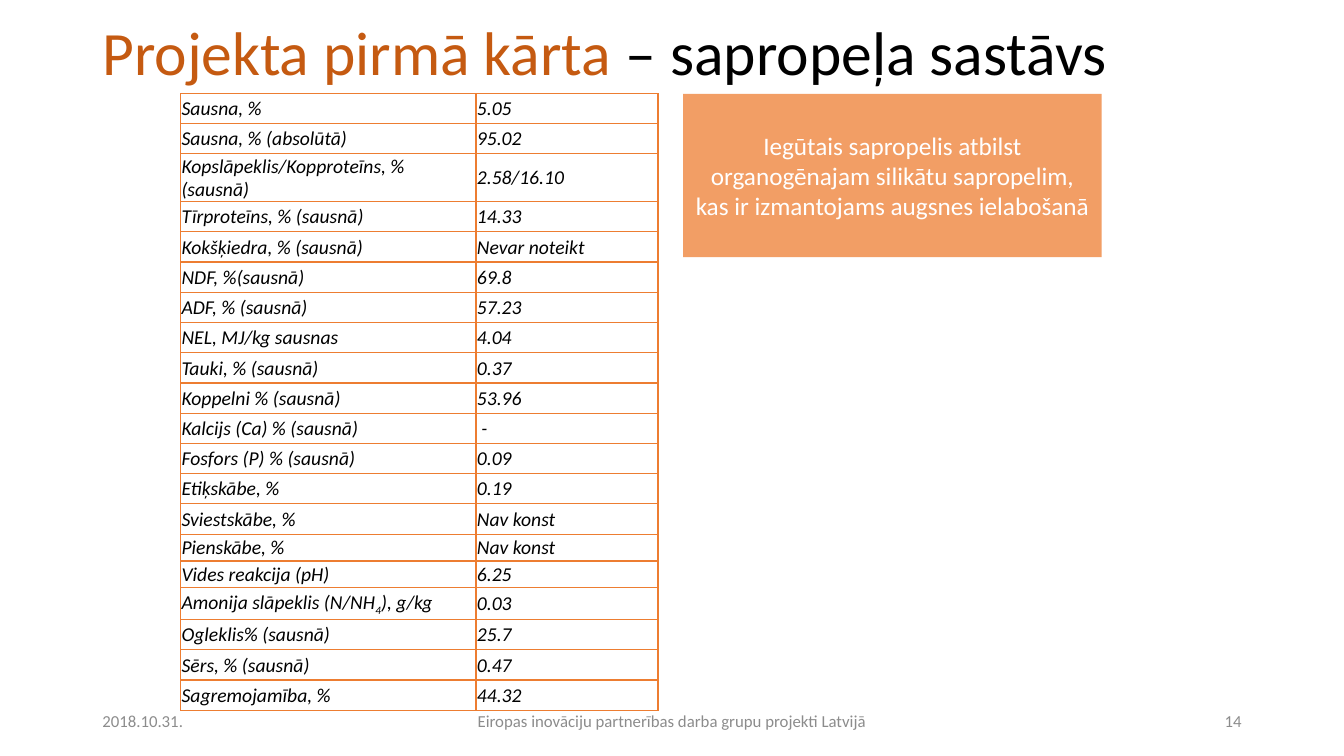
from lxml import etree
from pptx import Presentation
from pptx.dml.color import RGBColor
from pptx.enum.shapes import MSO_SHAPE
from pptx.enum.text import MSO_ANCHOR, PP_ALIGN
from pptx.oxml.ns import qn
from pptx.util import Pt

LEFT, CENTER, RIGHT = PP_ALIGN.LEFT, PP_ALIGN.CENTER, PP_ALIGN.RIGHT
MIDDLE = MSO_ANCHOR.MIDDLE
RECTANGLE = MSO_SHAPE.RECTANGLE

FONT = "Calibri"
BLACK = RGBColor(0x00, 0x00, 0x00)
WHITE = RGBColor(0xFF, 0xFF, 0xFF)
GRAY = RGBColor(0x8C, 0x8C, 0x8C)
RUST = RGBColor(0xC5, 0x5A, 0x11)
ORANGE = RGBColor(0xED, 0x7D, 0x31)
PEACH = RGBColor(0xF2, 0x9E, 0x65)

ROW_HEIGHT = 21.6
# Label, value and row height
COMPOSITION = [
    ("Sausna, %", "5.05", 21),
    ("Sausna, % (absolūtā)", "95.02", ROW_HEIGHT),
    ("Kopslāpeklis/Kopproteīns, % (sausnā)", "2.58/16.10", ROW_HEIGHT),
    ("Tīrproteīns, % (sausnā)", "14.33", ROW_HEIGHT),
    ("Kokšķiedra, % (sausnā)", "Nevar noteikt", ROW_HEIGHT),
    ("NDF, %(sausnā)", "69.8", ROW_HEIGHT),
    ("ADF, % (sausnā)", "57.23", ROW_HEIGHT),
    ("NEL, MJ/kg sausnas", "4.04", ROW_HEIGHT),
    ("Tauki, % (sausnā)", "0.37", ROW_HEIGHT),
    ("Koppelni % (sausnā)", "53.96", ROW_HEIGHT),
    ("Kalcijs (Ca) % (sausnā)", " -", ROW_HEIGHT),
    ("Fosfors (P) % (sausnā)", "0.09", ROW_HEIGHT),
    ("Etiķskābe, %", "0.19", ROW_HEIGHT),
    ("Sviestskābe, %", "Nav konst", ROW_HEIGHT),
    ("Pienskābe, %", "Nav konst", 19.2),
    ("Vides reakcija (pH)", "6.25", 19.2),
    ("Amonija slāpeklis (N/NH|4|), g/kg", "0.03", 22.6),
    ("Ogleklis% (sausnā)", "25.7", ROW_HEIGHT),
    ("Sērs, % (sausnā)", "0.47", ROW_HEIGHT),
    ("Sagremojamība, %", "44.32", ROW_HEIGHT),
]


def style_paragraph(para, size, color=None, align=LEFT):
    para.alignment = align
    para.font.name = FONT
    para.font.size = Pt(size)
    if color is not None:
        para.font.color.rgb = color


def add_text_box(left, top, width, height):
    box = page.shapes.add_textbox(Pt(left), Pt(top), Pt(width), Pt(height))
    box.text_frame.word_wrap = True
    box.text_frame.vertical_anchor = MIDDLE
    return box.text_frame


deck = Presentation()
deck.slide_width, deck.slide_height = Pt(960), Pt(540)
page = deck.slides.add_slide(deck.slide_layouts[6])

# Title
title = add_text_box(66, 0, 828, 80).paragraphs[0]
style_paragraph(title, 44)
title.line_spacing = 0.9
for text, color in (("Projekta pirmā kārta ", RUST), ("– sapropeļa sastāvs", BLACK)):
    span = title.add_run()
    span.text = text
    span.font.color.rgb = color

# Composition table
table = page.shapes.add_table(
    len(COMPOSITION), 2, Pt(129), Pt(67), Pt(341), Pt(440)).table
table.first_row = table.horz_banding = False
for column, width in zip(table.columns, (211, 130)):
    column.width = Pt(width)
for row, (label, value, height) in zip(table.rows, COMPOSITION):
    row.height = Pt(height)
    for cell, text in zip(row.cells, (label, value)):
        cell.vertical_anchor = MIDDLE
        cell.margin_left = cell.margin_right = cell.margin_top = Pt(0.7)
        cell.margin_bottom = 0
        para = cell.text_frame.paragraphs[0]
        style_paragraph(para, 14, BLACK)
        para.font.italic = True
        # Every second part between bars is a subscript
        for index, part in enumerate(text.split("|")):
            span = para.add_run()
            span.text = part
            if index % 2:
                span._r.get_or_add_rPr().set("baseline", "-25000")
        # Cell borders
        properties = cell._tc.get_or_add_tcPr()
        for side in ("a:lnL", "a:lnR", "a:lnT", "a:lnB"):
            border = etree.SubElement(properties, qn(side), w=str(Pt(1)))
            fill = etree.SubElement(border, qn("a:solidFill"))
            etree.SubElement(fill, qn("a:srgbClr"), val=str(ORANGE))
        cell.fill.background()

# Conclusion box
conclusion = page.shapes.add_shape(RECTANGLE, Pt(488), Pt(67), Pt(299), Pt(116.6))
conclusion.shadow.inherit = False
conclusion.fill.solid()
conclusion.fill.fore_color.rgb = PEACH
conclusion.line.fill.background()
frame = conclusion.text_frame
frame.word_wrap = False
frame.vertical_anchor = MIDDLE
frame.text = ("Iegūtais sapropelis atbilst\n"
              "organogēnajam silikātu sapropelim,\n"
              "kas ir izmantojams augsnes ielabošanā")
for para in frame.paragraphs:
    style_paragraph(para, 18, WHITE, CENTER)

# Footer
for left, width, text, align in (
    (66, 216, "2018.10.31.", LEFT),
    (318, 324, "Eiropas inovāciju partnerības darba grupu projekti Latvijā", CENTER),
    (678, 216, "14", RIGHT),
):
    para = add_text_box(left, 500.5, width, 28.8).paragraphs[0]
    para.text = text
    style_paragraph(para, 12, GRAY, align)

deck.save("out.pptx")
